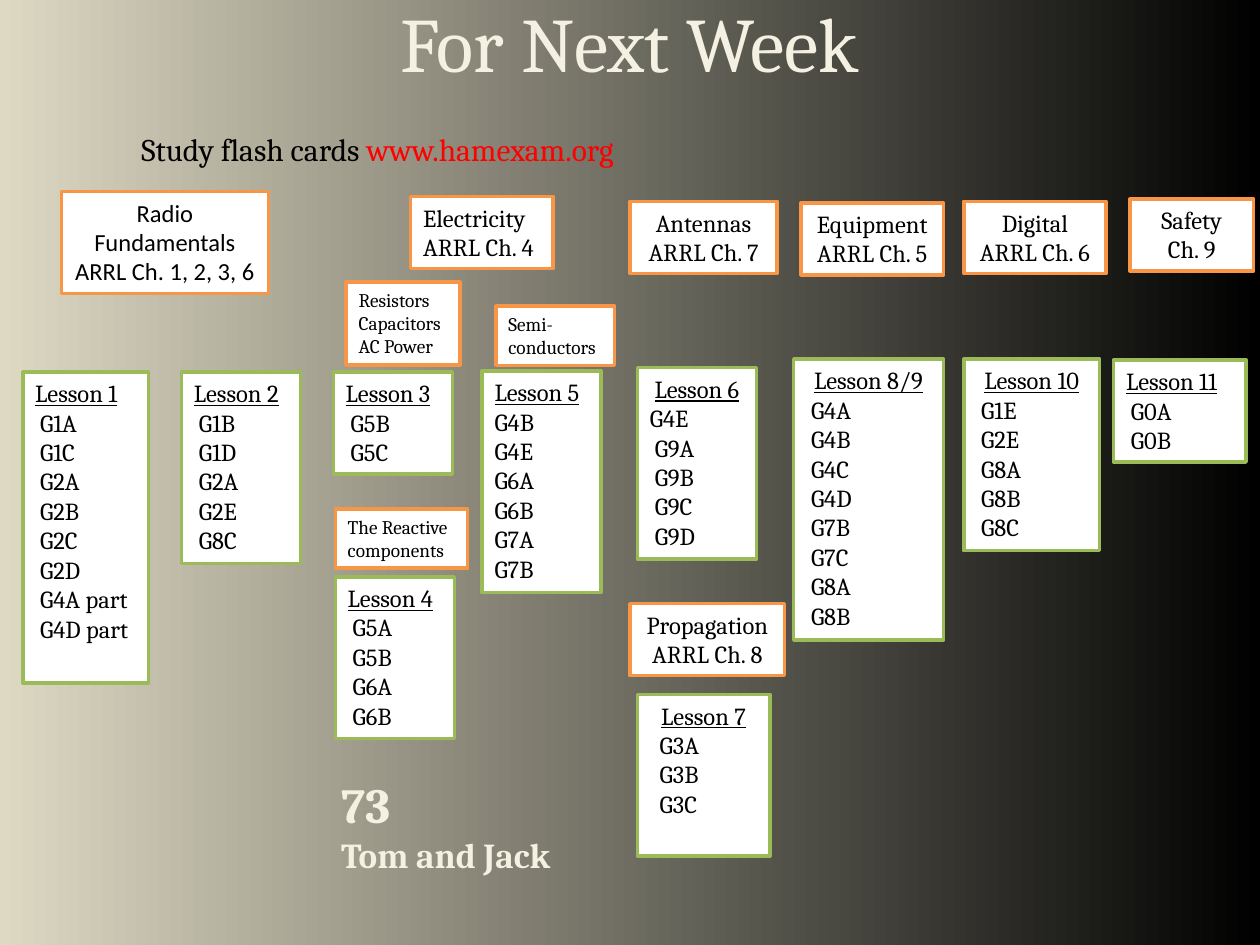
from pptx import Presentation
from pptx.dml.color import RGBColor
from pptx.enum.shapes import MSO_SHAPE as Shape
from pptx.enum.text import MSO_ANCHOR as Anchor, PP_ALIGN as Align
from pptx.util import Cm, Pt

COLORS = {
    "sand": "DDD9C3", "black": "000000", "white": "FFFFFF", "cream": "F4F1E3",
    "red": "FF0000", "lesson": "9BBB59", "topic": "F79646",
}
LEFT, CENTER = Align.LEFT, Align.CENTER

# left, top, width, size, font, alignment, lines
TOPICS = [
    (1.24, 3.86, 4.17, 14, "Calibri", CENTER, ["Radio", "Fundamentals", "ARRL Ch. 1, 2, 3, 6"]),
    (8.28, 3.96, 2.87, 14, "Cambria", LEFT, ["Electricity", "ARRL Ch. 4"]),
    (12.7, 4.06, 2.97, 14, "Cambria", CENTER, ["Antennas", "ARRL Ch. 7"]),
    (16.15, 4.09, 2.87, 14, "Cambria", CENTER, ["Equipment", "ARRL Ch. 5"]),
    (19.43, 4.06, 2.87, 14, "Cambria", CENTER, ["Digital", "ARRL Ch. 6"]),
    (22.78, 4.01, 2.49, 14, "Cambria", CENTER, ["Safety", "Ch. 9"]),
    (12.7, 12.17, 3.12, 14, "Cambria", CENTER, ["Propagation", "ARRL Ch. 8"]),
    (6.98, 5.69, 2.29, 11, "Cambria", LEFT, ["Resistors", "Capacitors", "AC Power"]),
    (10, 6.17, 2.39, 11, "Cambria", LEFT, ["Semi-", "conductors"]),
    (6.76, 10.26, 2.67, 11, "Cambria", LEFT, ["The Reactive", "components"]),
]

# title, left, top, width, title alignment, first indent, indent, spare rows, codes
LESSONS = [
    ("Lesson 1", 0.46, 7.5, 2.54, LEFT, 0.1, 0.1, 1,
     ["G1A", "G1C", "G2A", "G2B", "G2C", "G2D", "G4A part", "G4D part"]),
    ("Lesson 2", 3.66, 7.5, 2.4, LEFT, 0.1, 0.1, 0, ["G1B", "G1D", "G2A", "G2E", "G8C"]),
    ("Lesson 3", 6.72, 7.5, 2.4, LEFT, 0.1, 0.1, 0, ["G5B", "G5C"]),
    ("Lesson 4", 6.76, 11.63, 2.4, LEFT, 0.1, 0.1, 0, ["G5A", "G5B", "G6A", "G6B"]),
    ("Lesson 5", 9.72, 7.48, 2.4, LEFT, 0, 0, 0, ["G4B", "G4E", "G6A", "G6B", "G7A", "G7B"]),
    ("Lesson 6", 12.85, 7.41, 2.4, CENTER, 0, 0.1, 0, ["G4E", "G9A", "G9B", "G9C", "G9D"]),
    ("Lesson 7", 12.85, 14, 2.67, CENTER, 0.2, 0.2, 1, ["G3A", "G3B", "G3C"]),
    ("Lesson 8/9", 16, 7.24, 3.02, CENTER, 0.1, 0.1, 0,
     ["G4A", "G4B", "G4C", "G4D", "G7B", "G7C", "G8A", "G8B"]),
    ("Lesson 10", 19.43, 7.24, 2.74, CENTER, 0.1, 0.1, 0, ["G1E", "G2E", "G8A", "G8B", "G8C"]),
    ("Lesson 11", 22.45, 7.26, 2.67, LEFT, 0.1, 0.1, 0, ["G0A", "G0B"]),
]


def color(name):
    return RGBColor.from_string(COLORS[name])


def style(span, size, tint="black", font="Cambria", bold=False):
    span.font.size, span.font.name, span.font.bold = Pt(size), font, bold
    span.font.color.rgb = color(tint)


def add_card(page, left, top, width, size, font, border, lines, spare=0):
    height = 0.25 + 0.043 * size * (len(lines) + spare)
    box = page.shapes.add_shape(Shape.RECTANGLE, Cm(left), Cm(top), Cm(width), Cm(height))
    box.shadow.inherit = False
    box.fill.solid()
    box.fill.fore_color.rgb = color("white")
    box.line.color.rgb = color(border)
    box.line.width = Pt(2)
    frame = box.text_frame
    frame.word_wrap = True
    frame.vertical_anchor = Anchor.TOP
    frame.text = "\n".join(lines)
    for para in frame.paragraphs:
        para.alignment = LEFT
        style(para.runs[0], size, font=font)
    return frame.paragraphs


def add_text(page, left, top, width, height, text):
    frame = page.shapes.add_textbox(Cm(left), Cm(top), Cm(width), Cm(height)).text_frame
    frame.word_wrap = True
    frame.text = text
    return frame


def main():
    deck = Presentation()
    deck.slide_width, deck.slide_height = Cm(25.4), Cm(19.05)
    page = deck.slides.add_slide(deck.slide_layouts[6])

    backdrop = page.background.fill
    backdrop.gradient()
    backdrop.gradient_angle = 0
    for stop, name, position in zip(backdrop.gradient_stops, ("sand", "black"), (0, 1)):
        stop.color.rgb = color(name)
        stop.position = position

    title = add_text(page, 2.54, 0, 20.32, 1.68, "For Next Week")
    title.vertical_anchor = Anchor.MIDDLE
    title.paragraphs[0].alignment = CENTER
    style(title.paragraphs[0].runs[0], 44, "cream")

    study = add_text(page, 2.6, 2.49, 10.8, 1.02, "Study flash cards ").paragraphs[0]
    style(study.runs[0], 18)
    link = study.add_run()
    link.text = "www.hamexam.org"
    style(link, 18, "red")

    closing = add_text(page, 6.63, 15.49, 5.2, 2.31, "73\nTom and Jack")
    for para, size in zip(closing.paragraphs, (28, 20)):
        style(para.runs[0], size, "cream", bold=True)

    for left, top, width, size, font, alignment, lines in TOPICS:
        for para in add_card(page, left, top, width, size, font, "topic", lines):
            para.alignment = alignment

    for name, left, top, width, alignment, first, indent, spare, codes in LESSONS:
        heading, *rows = add_card(page, left, top, width, 14, "Cambria", "lesson",
                                  [name, *codes], spare)
        heading.alignment = alignment
        heading.runs[0].font.underline = True
        for number, row in enumerate(rows):
            margin = indent if number else first
            row._p.get_or_add_pPr().set("marL", str(Cm(margin)))

    deck.save("out.pptx")


if __name__ == "__main__":
    main()
